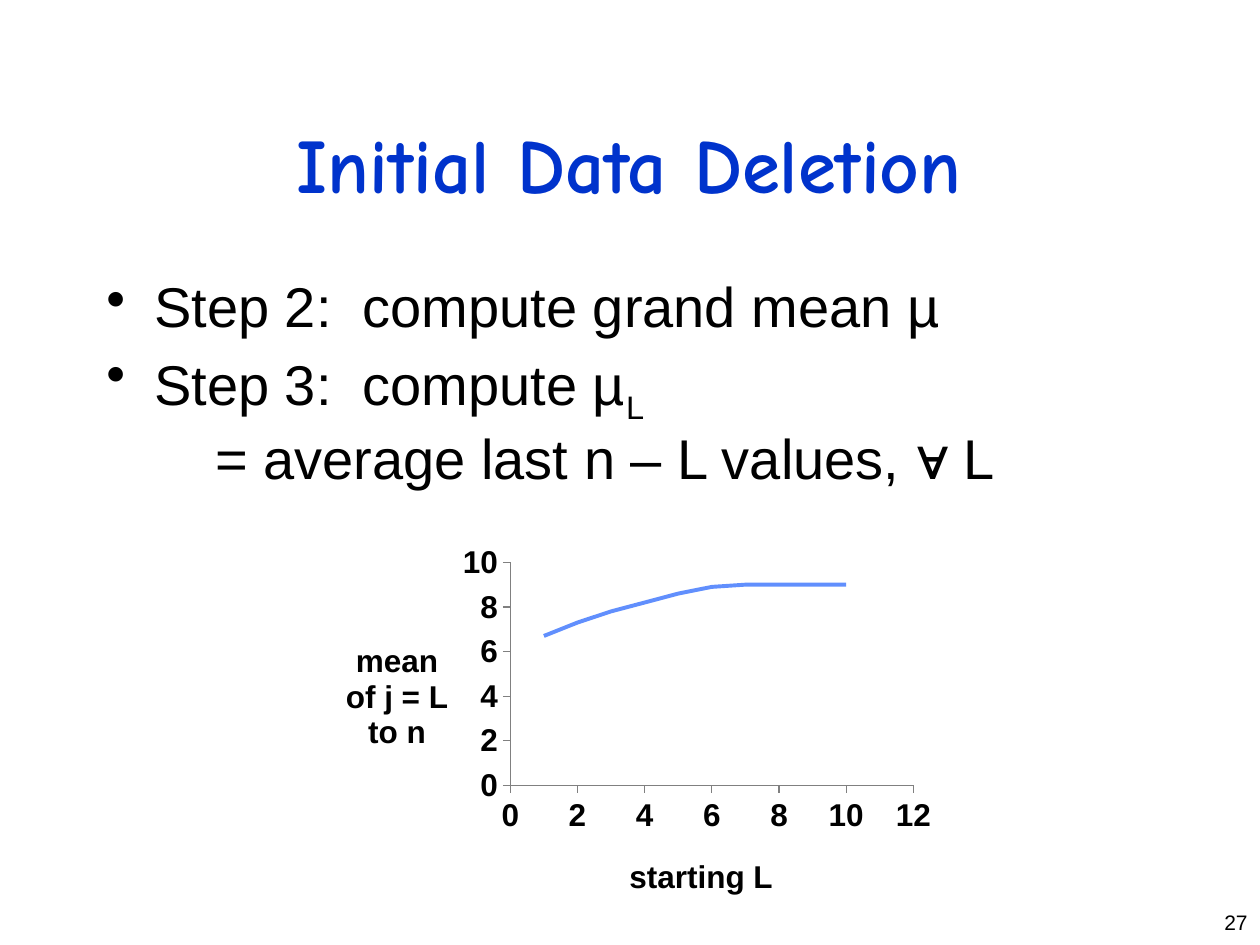
from lxml import etree
from pptx import Presentation
from pptx.chart.data import XyChartData
from pptx.dml.color import RGBColor
from pptx.enum.chart import XL_CHART_TYPE, XL_TICK_MARK
from pptx.enum.text import MSO_ANCHOR, PP_ALIGN
from pptx.oxml import parse_xml
from pptx.oxml.ns import nsdecls, qn
from pptx.util import Emu, Pt

SCATTER = XL_CHART_TYPE.XY_SCATTER_LINES_NO_MARKERS
TICK_OUT = XL_TICK_MARK.OUTSIDE
TOP, MIDDLE = MSO_ANCHOR.TOP, MSO_ANCHOR.MIDDLE
LEFT, CENTER, RIGHT = PP_ALIGN.LEFT, PP_ALIGN.CENTER, PP_ALIGN.RIGHT

EMU_PER_PX = 914400 / 126
BLACK, BLUE, LINE_BLUE, GRAY = "000000", "0033CC", "618FFD", "808080"
BODY_FONT, TITLE_FONT = "Arial", "Comic Neue"
MEANS = [6.7, 7.3, 7.8, 8.2, 8.6, 8.9, 9, 9, 9, 9]


def px(length):
    return Emu(round(length * EMU_PER_PX))


def color(hex_string):
    return RGBColor.from_string(hex_string)


def style_font(font, size, name=BODY_FONT, hex_string=BLACK, bold=False):
    font.size = Pt(size)
    font.name = name
    font.bold = bold
    font.color.rgb = color(hex_string)


def add_box(page, left, top, width, height, anchor=TOP):
    box = page.shapes.add_textbox(px(left), px(top), px(width), px(height))
    box.text_frame.word_wrap = True
    box.text_frame.vertical_anchor = anchor
    return box.text_frame


def add_span(para, text, size, subscript=False, **font_style):
    span = para.add_run()
    span.text = text
    style_font(span.font, size, **font_style)
    if subscript:
        span.font._element.set("baseline", "-25000")


def add_line(page, place, text, size, align, anchor=TOP, **font_style):
    """Add a box that holds one paragraph of one run."""
    para = add_box(page, *place, anchor=anchor).paragraphs[0]
    para.alignment = align
    add_span(para, text, size, **font_style)


def indent(para, margin, first_line, bullet=None):
    properties = para._p.get_or_add_pPr()
    properties.set("marL", str(px(margin)))
    properties.set("indent", str(px(first_line)))
    if bullet:
        etree.SubElement(properties, qn("a:buChar")).set("char", bullet)


def add_steps(page, place, steps):
    frame = add_box(page, *place)
    for index, (spans, margin, first_line, bullet) in enumerate(steps):
        para = frame.add_paragraph() if index else frame.paragraphs[0]
        para.alignment = LEFT
        para.line_spacing = 0.9
        para.space_before = Pt(6.4)
        indent(para, margin, first_line, bullet)
        for text, subscript in spans:
            add_span(para, text, 32, subscript)


def layout_xml(target, **values):
    """Build a manual chart layout from fractions of the chart area."""
    inner = '<c:layoutTarget val="inner"/>' if target == "plot" else ""
    modes = '<c:xMode val="edge"/><c:yMode val="edge"/>'
    sizes = "".join(f'<c:{key} val="{value}"/>' for key, value in values.items())
    return parse_xml(f"<c:layout {nsdecls('c')}><c:manualLayout>{inner}{modes}{sizes}"
                     "</c:manualLayout></c:layout>")


def place_layout(parent, layout, after=None):
    for old in parent.findall(qn("c:layout")):
        parent.remove(old)
    if after is None:
        parent.insert(0, layout)
    else:
        parent.find(qn(after)).addnext(layout)


def style_axis(axis, title, maximum, x, y):
    axis.minimum_scale, axis.maximum_scale, axis.major_unit = 0, maximum, 2
    axis.has_major_gridlines = False
    axis.major_tick_mark = TICK_OUT
    axis.format.line.color.rgb = color(GRAY)
    axis.format.line.width = Pt(0.75)
    style_font(axis.tick_labels.font, 18, bold=True)
    frame = axis.axis_title.text_frame
    add_span(frame.paragraphs[0], title, 18, bold=True)
    body = frame._txBody.find(qn("a:bodyPr"))
    body.set("rot", "0")
    body.set("vert", "horz")
    place_layout(axis.axis_title._element, layout_xml("title", x=x, y=y), "c:tx")


def add_mean_chart(page, left, top, width, height):
    data = XyChartData()
    series_data = data.add_series("Series 1")
    for start, mean in enumerate(MEANS, 1):
        series_data.add_data_point(start, mean)
    chart = page.shapes.add_chart(
        SCATTER, px(left), px(top), px(width), px(height), data).chart
    chart.has_legend = chart.has_title = False
    style_font(chart.font, 18, bold=True)
    plot = chart.plots[0]
    plot.vary_by_categories = False
    line = plot.series[0]
    line.smooth = False
    line.format.line.color.rgb = color(LINE_BLUE)
    line.format.line.width = Pt(2.25)
    style_axis(chart.category_axis, "starting L", 12, 0.49, 0.83)
    style_axis(chart.value_axis, "mean of j = L to n", 10, 0.04, 0.26)
    plot_area = chart._chartSpace.chart.plotArea
    place_layout(plot_area, layout_xml("plot", x=0.31, y=0.07, w=0.64, h=0.59))


def main():
    deck = Presentation()
    deck.slide_width, deck.slide_height = px(1260), px(945)
    page = deck.slides.add_slide(deck.slide_layouts[6])
    add_line(page, (94, 84, 1071, 158), "Initial Data Deletion", 44, CENTER,
             MIDDLE, name=TITLE_FONT, hex_string=BLUE, bold=True)
    add_steps(page, (94, 273, 1071, 567), [
        ([("Step 2:  compute grand mean µ", False)], 48, -48, "•"),
        ([("Step 3:  compute µ", False), ("L", True)], 48, -48, "•"),
        ([("= average last n – L values, ∀ L", False)], 109, 0, None),
    ])
    add_line(page, (1166, 903, 94, 42), "27", 12, RIGHT)
    add_mean_chart(page, 315, 536, 630, 378)
    deck.save("out.pptx")


if __name__ == "__main__":
    main()
